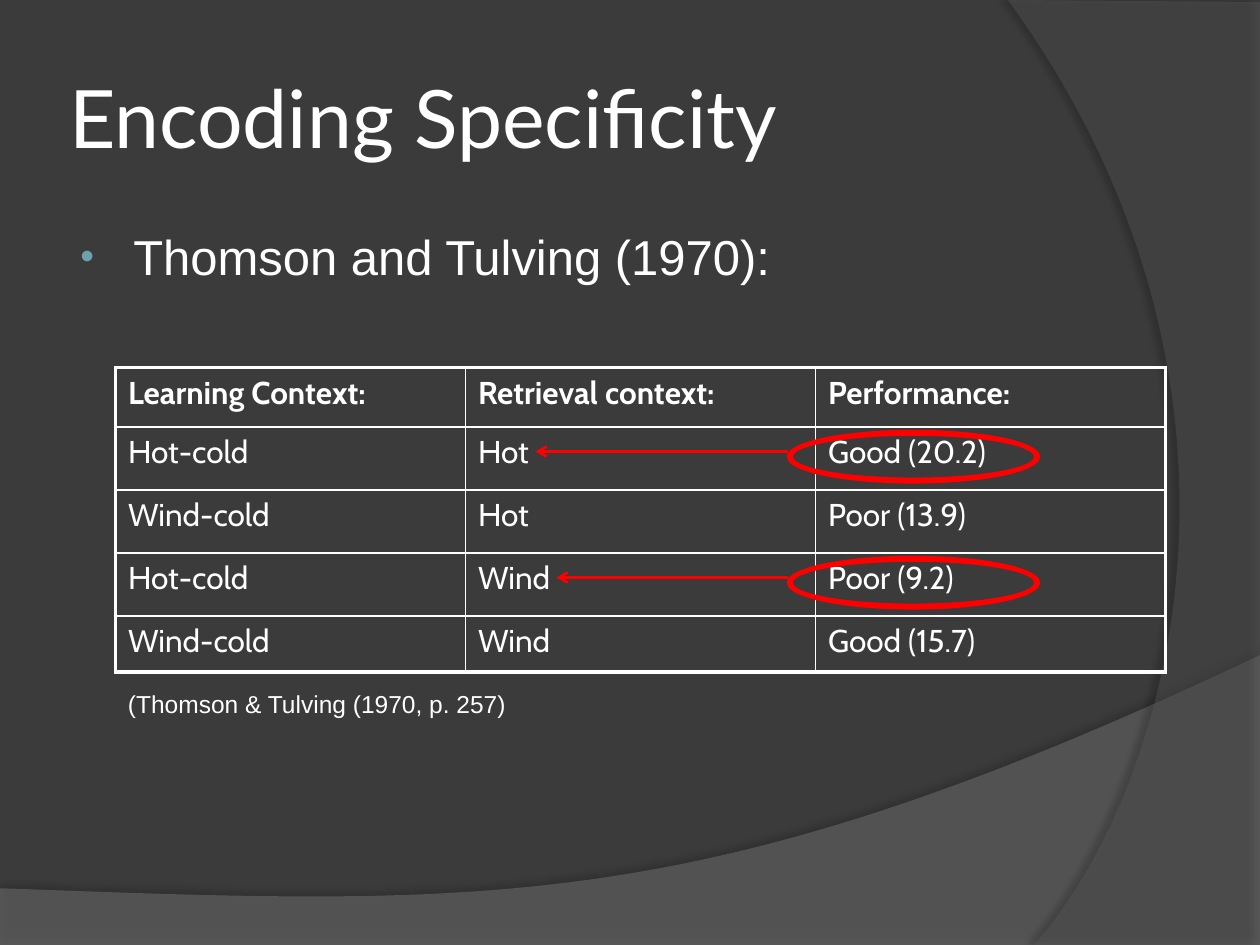
from dataclasses import dataclass

from lxml.etree import SubElement as Sub
from pptx import Presentation
from pptx.dml.color import RGBColor as RGB
from pptx.enum.shapes import MSO_CONNECTOR as Wire, MSO_SHAPE as Shape
from pptx.enum.text import MSO_ANCHOR as Anchor
from pptx.oxml.ns import qn
from pptx.util import Inches, Pt


@dataclass(frozen=True)
class Theme:
    back: str = "3B3B3B"
    ink: str = "FFFFFF"
    mark: str = "FF0000"
    dot: str = "6EA0B0"
    wave: str = "7C7C7C"
    arc: str = "595959"
    shade: str = "000000"
    head: str = "Lato"
    body: str = "Arial"
    grid: str = "Cabin"
    huge: int = 46
    large: int = 28
    mid: int = 18
    small: int = 14
    thick: float = 2.25
    thin: float = 1


def node(up, tag, **attrs):
    return Sub(up, qn("a:" + tag), {k: str(v) for k, v in attrs.items()})


def tint(up, color, alpha=100):
    node(node(up, "srgbClr", val=color), "alpha", val=alpha * 1000)


def write(frame, text, font, size, color, bold=False, gap=0, dot=None):
    para = frame.paragraphs[0]
    run = para.add_run()
    run.text = text
    run.font.name, run.font.size, run.font.bold = font, Pt(size), bold
    run.font.color.rgb = RGB.from_string(color)
    props = para._p.get_or_add_pPr()
    if gap:
        node(node(props, "spcBef"), "spcPct", val=gap * 1000)
    if dot:
        props.set("marL", str(Inches(0.46)))
        props.set("indent", str(Inches(-0.42)))
        tint(node(props, "buClr"), dot)
        node(props, "buSzPct", val=80000)
        node(props, "buFont", typeface=font)
        node(props, "buChar", char="•")


def bend(a, b, c, d, steps=60):
    """Return points along a cubic curve from a to d."""
    spots = []
    for i in range(steps + 1):
        t = i / steps
        u = 1 - t
        spots.append(tuple(u**3 * p + 3 * u * u * t * q + 3 * u * t * t * r + t**3 * s
                           for p, q, r, s in zip(a, b, c, d)))
    return spots


class Deck:
    """Draw on one slide, with lengths in a grid of 120 columns by 90 rows."""

    def __init__(self, theme):
        self.theme = theme
        self.show = Presentation()
        self.show.slide_width, self.show.slide_height = Inches(10), Inches(7.5)
        self.unit = self.show.slide_width / 120
        self.slide = self.show.slides.add_slide(self.show.slide_layouts[6])
        fill = self.slide.background.fill
        fill.solid()
        fill.fore_color.rgb = RGB.from_string(theme.back)

    def span(self, *cells):
        return [round(c * self.unit) for c in cells]

    def sheet(self, spots, color, alpha, shade, dist, turn):
        spots = [self.span(*s) for s in spots]
        pen = self.slide.shapes.build_freeform(*spots[0], scale=1.0)
        pen.add_line_segments(spots[1:], close=True)
        form = pen.convert_to_shape()
        form.fill.solid()
        form.fill.fore_color.rgb = RGB.from_string(color)
        tone = form._element.spPr.find(qn("a:solidFill"))[0]
        node(tone, "alpha", val=alpha * 1000)
        form.line.fill.background()
        glow = node(node(form._element.spPr, "effectLst"), "outerShdw", blurRad=Pt(4),
                    dist=Pt(dist), dir=turn * 60000, algn="ctr", rotWithShape=0)
        tint(glow, self.theme.shade, shade)

    def text(self, box, words, font, size, wrap=True, anchor=Anchor.TOP, inset=0.1, **form):
        frame = self.slide.shapes.add_textbox(*self.span(*box)).text_frame
        frame.word_wrap, frame.vertical_anchor = wrap, anchor
        frame.margin_left = frame.margin_right = Inches(inset)
        write(frame, words, font, size, self.theme.ink, **form)

    def table(self, box, rows, highs):
        look, last, edge = self.theme, len(rows) - 1, len(rows[0]) - 1
        grid = self.slide.shapes.add_table(len(rows), len(rows[0]), *self.span(*box)).table
        grid.first_row = grid.horz_banding = False
        for row, high in zip(grid.rows, self.span(*highs)):
            row.height = high
        for y, row in enumerate(rows):
            for x, words in enumerate(row):
                cell = grid.cell(y, x)
                write(cell.text_frame, words, look.grid, look.mid, look.ink,
                      bold=y == 0, gap=20)
                outer = {"L": x == 0, "R": x == edge, "T": y == 0, "B": y == last}
                for side, out in outer.items():
                    line = node(cell._tc.get_or_add_tcPr(), "ln" + side,
                                w=Pt(look.thick if out else look.thin))
                    tint(node(line, "solidFill"), look.ink)
                cell.fill.background()

    def ring(self, box):
        ring = self.slide.shapes.add_shape(Shape.DONUT, *self.span(*box))
        ring.adjustments[0] = 0.09
        ring.shadow.inherit = False
        ring.fill.solid()
        ring.fill.fore_color.rgb = RGB.from_string(self.theme.mark)
        ring.line.color.rgb = RGB.from_string(self.theme.mark)
        ring.line.width = Pt(0.75)

    def arrow(self, start, end):
        wire = self.slide.shapes.add_connector(Wire.STRAIGHT, *self.span(*start, *end))
        wire.line.color.rgb = RGB.from_string(self.theme.mark)
        wire.line.width = Pt(1.5)
        node(wire.line._get_or_add_ln(), "tailEnd", type="arrow")
        node(wire._element.spPr, "effectLst")


def main():
    look = Theme()
    deck = Deck(look)
    wave = bend((120, 62.4), (67.1, 87.5), (46.9, 86.3), (0, 84.6))
    deck.sheet([(0, 90), (120, 90)] + wave, look.wave, 45, 35, 3.5, 270)
    arc = bend((98.5, 90), (112.2, 74.3), (122.2, 36), (96, 0))
    deck.sheet([(120, 0.2), (120, 90)] + arc, look.arc, 40, 45, 4, 180)
    deck.text((6, 3.6, 98, 15), "Encoding Specificity", look.head, look.huge,
              anchor=Anchor.MIDDLE, inset=0.05)
    deck.text((6, 21, 98, 59.4), "Thomson and Tulving (1970):", look.body, look.large,
              gap=20, dot=look.dot)
    rows = [
        ("Learning Context:", "Retrieval context:", "Performance:"),
        ("Hot-cold", "Hot", "Good (20.2)"),
        ("Wind-cold", "Hot", "Poor (13.9)"),
        ("Hot-cold", "Wind", "Poor (9.2)"),
        ("Wind-cold", "Wind", "Good (15.7)"),
    ]
    deck.table((11, 35, 100, 29), rows, (5.67, 6, 6, 6, 5.33))
    deck.text((11, 65, 38.8, 4.1), "(Thomson & Tulving (1970, p. 257)", look.body,
              look.small, wrap=False)
    marks = ((41, 51), (53, 53))
    for top, _ in marks:
        deck.ring((75, top, 24, 5))
    for top, tip in marks:
        deck.arrow((75, top + 2), (tip, top + 2))
    deck.show.save("out.pptx")


if __name__ == "__main__":
    main()
